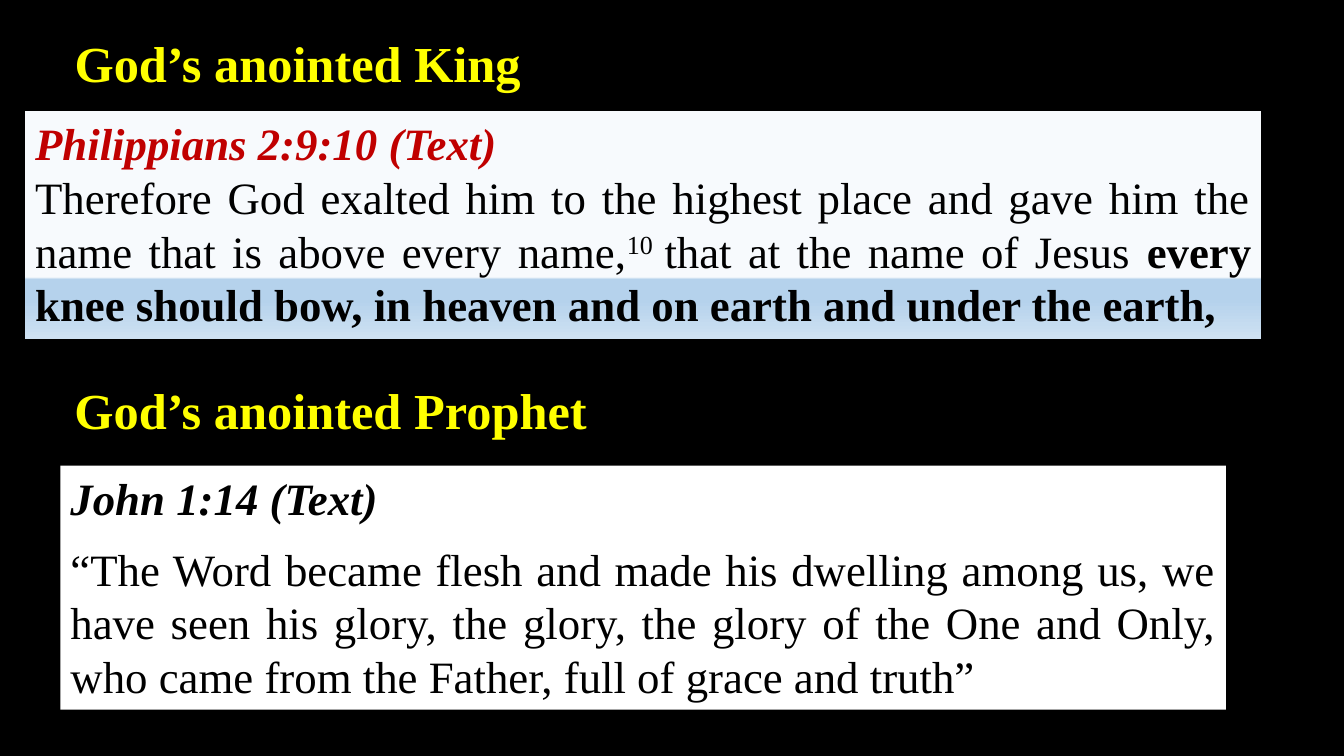
from lxml.etree import SubElement
from pptx import Presentation
from pptx.dml.color import RGBColor
from pptx.enum.shapes import MSO_SHAPE
from pptx.enum.text import MSO_ANCHOR, MSO_AUTO_SIZE, PP_ALIGN
from pptx.oxml.ns import qn
from pptx.util import Inches, Pt

BLACK = RGBColor(0x00, 0x00, 0x00)
WHITE = RGBColor(0xFF, 0xFF, 0xFF)
YELLOW = RGBColor(0xFF, 0xFF, 0x00)
RED = RGBColor(0xC0, 0x00, 0x00)
PALE = RGBColor(0xF7, 0xFA, 0xFD)
BLUE = RGBColor(0xB5, 0xD2, 0xEC)
LIGHT_BLUE = RGBColor(0xCE, 0xE1, 0xF2)
HIGHLIGHT_STOPS = [(73, PALE), (74, BLUE), (83, BLUE), (100, LIGHT_BLUE)]

FONT = "Times New Roman"
COLUMNS, ROWS = 160, 90
SLIDE_WIDTH, SLIDE_HEIGHT = Inches(13.33), Inches(7.5)


def grid_box(column, row, columns, rows):
    cell_width, cell_height = SLIDE_WIDTH / COLUMNS, SLIDE_HEIGHT / ROWS
    return [int(length) for length in (column * cell_width, row * cell_height,
                                       columns * cell_width, rows * cell_height)]


def style_run(run, size, color, bold=False, italic=False):
    run.font.name = FONT
    run.font.size = Pt(size)
    run.font.color.rgb = color
    run.font.bold = bold
    run.font.italic = italic


def format_heading(heading, box, wording):
    heading.left, heading.top, heading.width, heading.height = box
    frame = heading.text_frame
    frame.text = wording
    frame.word_wrap = False
    frame.auto_size = MSO_AUTO_SIZE.NONE
    frame.vertical_anchor = MSO_ANCHOR.TOP
    frame.paragraphs[0].alignment = PP_ALIGN.LEFT
    style_run(frame.paragraphs[0].runs[0], 36, YELLOW, bold=True)


def fill_gradient(panel, stops):
    panel.fill.gradient()
    panel.fill.gradient_angle = 270
    stop_list = panel._element.spPr.find(qn("a:gradFill")).find(qn("a:gsLst"))
    stop_list.clear()
    for position, color in stops:
        stop = SubElement(stop_list, qn("a:gs"), pos=str(position * 1000))
        SubElement(stop, qn("a:srgbClr"), val=str(color))


def add_scripture(slide, box, reference, reference_color, verse, space_before=0):
    panel = slide.shapes.add_shape(MSO_SHAPE.RECTANGLE, *box)
    panel.shadow.inherit = False
    panel.line.fill.background()
    panel.fill.solid()
    panel.fill.fore_color.rgb = WHITE
    frame = panel.text_frame
    frame.word_wrap = True
    frame.vertical_anchor = MSO_ANCHOR.TOP
    frame.text = reference
    style_run(frame.paragraphs[0].runs[0], 32, reference_color, bold=True, italic=True)
    passage = frame.add_paragraph()
    for wording, bold, raised in verse:
        run = passage.add_run()
        run.text = wording
        style_run(run, 32, BLACK, bold=bold)
        if raised:
            run.font._element.set("baseline", "30000")
    for paragraph in frame.paragraphs:
        paragraph.alignment = PP_ALIGN.JUSTIFY
        paragraph.space_before = Pt(space_before)
    return panel


def add_king(slide):
    format_heading(slide.shapes.title, grid_box(7.68, 3.24, 56.05, 8.52), "God’s anointed King")
    verse = [
        ("Therefore God exalted him to the highest place and gave him the name "
         "that is above every name,", False, False),
        ("10 ", False, True),
        ("that at the name of Jesus ", False, False),
        ("every knee should bow, in heaven and on earth and under the earth,", True, False),
    ]
    panel = add_scripture(slide, grid_box(3, 13.2, 147.15, 27.12),
                          "Philippians 2:9:10 (Text)", RED, verse)
    fill_gradient(panel, HIGHLIGHT_STOPS)


def add_prophet(slide):
    box = grid_box(7.68, 44.52, 64.1, 8.52)
    format_heading(slide.shapes.add_textbox(*box), box, "God’s anointed Prophet")
    verse = [("“The Word became flesh and made his dwelling among us, we have seen his glory, "
              "the glory, the glory of the One and Only, who came from the Father, "
              "full of grace and truth”", False, False)]
    add_scripture(slide, grid_box(7.2, 55.44, 138.75, 29.04),
                  "John 1:14 (Text)", BLACK, verse, space_before=12)


def main():
    deck = Presentation()
    deck.slide_width, deck.slide_height = SLIDE_WIDTH, SLIDE_HEIGHT
    slide = deck.slides.add_slide(deck.slide_layouts[5])
    slide.background.fill.solid()
    slide.background.fill.fore_color.rgb = BLACK
    add_king(slide)
    add_prophet(slide)
    deck.save("out.pptx")


if __name__ == "__main__":
    main()
